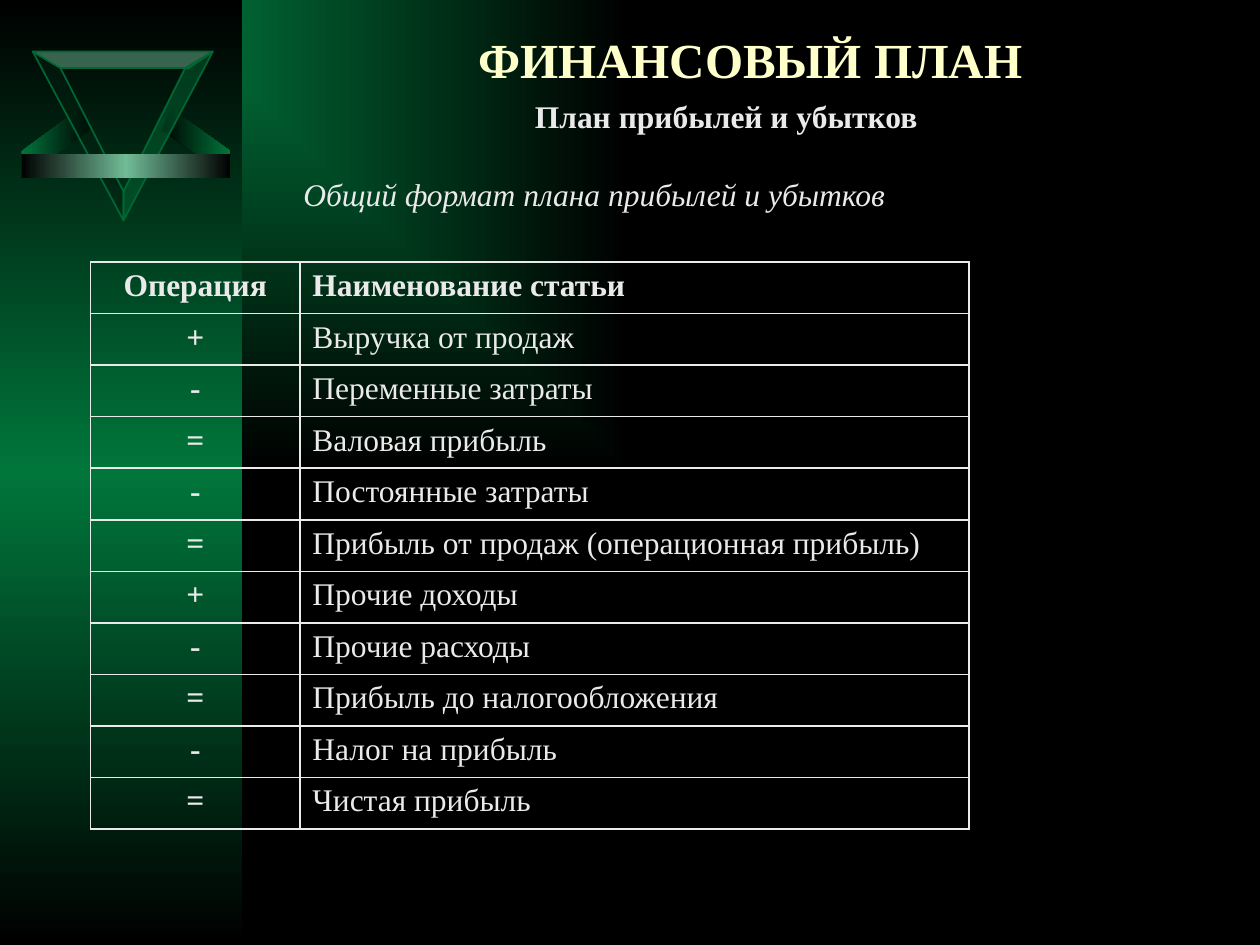
"""Build the profit and loss plan slide with its emblem and table of items."""

from typing import NamedTuple, Optional

from lxml.etree import SubElement
from pptx import Presentation
from pptx.dml.color import RGBColor
from pptx.enum.shapes import MSO_SHAPE
from pptx.enum.text import MSO_ANCHOR, PP_ALIGN
from pptx.oxml import parse_xml
from pptx.oxml.ns import nsdecls, qn
from pptx.util import Inches, Pt

BLACK = RGBColor(0x00, 0x00, 0x00)
GREEN = RGBColor(0x00, 0x76, 0x3B)
DARK_GREEN = RGBColor(0x00, 0x66, 0x33)
DEEP_GREEN = RGBColor(0x00, 0x20, 0x10)
LIGHT_GREEN = RGBColor(0x71, 0xBB, 0x96)
CREAM = RGBColor(0xFF, 0xFF, 0xCC)
PALE_GRAY = RGBColor(0xEA, 0xEA, 0xEA)
FONT = "Times New Roman"


class Bar(NamedTuple):
    left: float
    top: float
    width: float
    height: float
    colors: tuple
    angle: int


class Facet(NamedTuple):
    points: tuple
    colors: tuple


class Label(NamedTuple):
    text: str
    left: float
    top: float
    width: float
    height: float
    size: int
    color: RGBColor
    alignment: PP_ALIGN
    bold: bool = False
    italic: bool = False
    anchor: MSO_ANCHOR = MSO_ANCHOR.MIDDLE
    wrap: bool = True


class Item(NamedTuple):
    operation: str
    name: str


SIDE_BAND = Bar(0, 0, 1.92, 7.5, (BLACK, GREEN, BLACK), 90)
EMBLEM_BAR = Bar(0.17, 1.22, 1.66, 0.19, (BLACK, LIGHT_GREEN, BLACK), 0)
WING = ((1.83, 1.2), (1.83, 1.41), (1.28, 1.03), (1.28, 1.05), (1.36, 0.86))
MIRRORED_WING = tuple((2 - x, y) for x, y in WING)
FACETS = (
    Facet(WING, (BLACK, GREEN)),
    Facet(MIRRORED_WING, (GREEN, BLACK)),
    Facet(((0.98, 1.75), (0.98, 1.52), (0.48, 0.54), (0.26, 0.41)), (DEEP_GREEN,)),
    Facet(((0.26, 0.41), (0.48, 0.54), (1.5, 0.54), (1.69, 0.41)), (LIGHT_GREEN,)),
    Facet(((0.98, 1.75), (0.98, 1.52), (1.47, 0.54), (1.69, 0.41)), (DARK_GREEN,)),
)
LABELS = (
    Label("ФИНАНСОВЫЙ ПЛАН", 2.08, 0.25, 7.75, 0.43, 28, CREAM,
          PP_ALIGN.CENTER, bold=True),
    Label("План прибылей и убытков ", 2.79, 0.72, 6.01, 0.4, 18, PALE_GRAY,
          PP_ALIGN.CENTER, bold=True, anchor=MSO_ANCHOR.TOP),
    Label("Общий формат плана прибылей и убытков", 2.31, 1.34, 5.34, 0.4, 18,
          PALE_GRAY, PP_ALIGN.JUSTIFY, italic=True, wrap=False),
)
ITEMS = (
    Item("Операция", "Наименование статьи"),
    Item("+", "Выручка от продаж"),
    Item("-", "Переменные затраты"),
    Item("=", "Валовая прибыль"),
    Item("-", "Постоянные затраты"),
    Item("=", "Прибыль от продаж (операционная прибыль)"),
    Item("+", "Прочие доходы"),
    Item("-", "Прочие расходы"),
    Item("=", "Прибыль до налогообложения"),
    Item("-", "Налог на прибыль"),
    Item("=", "Чистая прибыль"),
)
COLUMN_WIDTHS = (1.66, 5.31)
TABLE_HEIGHT = 4.5


def apply_gradient(fill, properties, colors: tuple, angle: Optional[int] = None) -> None:
    """Spread the colours evenly, along an angle or out from the top left corner."""
    fill.gradient()
    step = 100000 // (len(colors) - 1)
    stops = "".join(
        f'<a:gs pos="{index * step}"><a:srgbClr val="{color}"/></a:gs>'
        for index, color in enumerate(colors)
    )
    if angle is None:
        direction = '<a:path path="rect"><a:fillToRect r="100000" b="100000"/></a:path>'
    else:
        direction = f'<a:lin ang="{angle * 60000}" scaled="0"/>'
    gradient = parse_xml(
        f'<a:gradFill {nsdecls("a")} rotWithShape="1">'
        f"<a:gsLst>{stops}</a:gsLst>{direction}</a:gradFill>"
    )
    properties.replace(properties.find(qn("a:gradFill")), gradient)


def draw_bar(slide, bar: Bar) -> None:
    """Draw a rectangle with a gradient and no outline."""
    shape = slide.shapes.add_shape(
        MSO_SHAPE.RECTANGLE, Inches(bar.left), Inches(bar.top),
        Inches(bar.width), Inches(bar.height))
    shape.shadow.inherit = False
    shape.line.fill.background()
    apply_gradient(shape.fill, shape._element.spPr, bar.colors, bar.angle)


def draw_facet(slide, facet: Facet) -> None:
    """Draw an emblem facet, gradient or half transparent with an outline."""
    start, *others = [(Inches(x), Inches(y)) for x, y in facet.points]
    builder = slide.shapes.build_freeform(*start)
    builder.add_line_segments(others, close=True)
    shape = builder.convert_to_shape()
    shape.shadow.inherit = False
    if len(facet.colors) > 1:
        shape.line.fill.background()
        apply_gradient(shape.fill, shape._element.spPr, facet.colors, 0)
        return
    shape.fill.solid()
    shape.fill.fore_color.rgb = facet.colors[0]
    color = shape._element.spPr.find(qn("a:solidFill")).find(qn("a:srgbClr"))
    SubElement(color, qn("a:alpha"), val="50000")
    shape.line.color.rgb = DARK_GREEN
    shape.line.width = Pt(1)


def add_text(paragraph, text: str, size: int, color: RGBColor,
             alignment: PP_ALIGN, bold: bool, italic: bool = False) -> None:
    """Add one formatted run to a paragraph."""
    paragraph.alignment = alignment
    run = paragraph.add_run()
    run.text = text
    font = run.font
    font.name, font.size, font.bold, font.italic = FONT, Pt(size), bold, italic
    font.color.rgb = color


def draw_label(slide, label: Label) -> None:
    """Draw a text box holding one line."""
    box = slide.shapes.add_textbox(
        Inches(label.left), Inches(label.top), Inches(label.width), Inches(label.height))
    frame = box.text_frame
    frame.word_wrap = label.wrap
    frame.vertical_anchor = label.anchor
    add_text(frame.paragraphs[0], label.text, label.size, label.color,
             label.alignment, label.bold, label.italic)


def draw_borders(cell) -> None:
    """Give a cell a thin line on every side and no fill."""
    properties = cell._tc.get_or_add_tcPr()
    for side in ("lnL", "lnR", "lnT", "lnB"):
        properties.append(parse_xml(
            f'<a:{side} {nsdecls("a")} w="{Pt(1)}"><a:solidFill>'
            f'<a:srgbClr val="{PALE_GRAY}"/></a:solidFill></a:{side}>'))
    cell.fill.background()


def draw_table(slide, items: tuple) -> None:
    """Draw the table of operations and item names."""
    table = slide.shapes.add_table(
        len(items), len(COLUMN_WIDTHS), Inches(0.72), Inches(2.08),
        Inches(sum(COLUMN_WIDTHS)), Inches(TABLE_HEIGHT)).table
    table.first_row = table.horz_banding = False
    for column, width in zip(table.columns, COLUMN_WIDTHS):
        column.width = Inches(width)
    for row_index, item in enumerate(items):
        table.rows[row_index].height = Inches(TABLE_HEIGHT / len(items))
        for column_index, text in enumerate(item):
            cell = table.cell(row_index, column_index)
            draw_borders(cell)
            paragraph = cell.text_frame.paragraphs[0]
            indent = Inches(0.38)
            properties = paragraph._p.get_or_add_pPr()
            properties.set("marL", str(indent))
            properties.set("indent", str(-indent))
            alignment = PP_ALIGN.JUSTIFY if column_index else PP_ALIGN.CENTER
            bold = row_index == 0 or column_index == 0
            add_text(paragraph, text, 18, PALE_GRAY, alignment, bold)


def main() -> None:
    """Build and save the presentation."""
    presentation = Presentation()
    presentation.slide_width = Inches(10)
    presentation.slide_height = Inches(7.5)
    slide = presentation.slides.add_slide(presentation.slide_layouts[6])
    background_fill = slide.background.fill
    apply_gradient(background_fill, slide._element.cSld.bg.bgPr, (GREEN, BLACK))
    draw_bar(slide, SIDE_BAND)
    for facet in FACETS:
        draw_facet(slide, facet)
    draw_bar(slide, EMBLEM_BAR)
    for label in LABELS:
        draw_label(slide, label)
    draw_table(slide, ITEMS)
    presentation.save("out.pptx")


if __name__ == "__main__":
    main()
